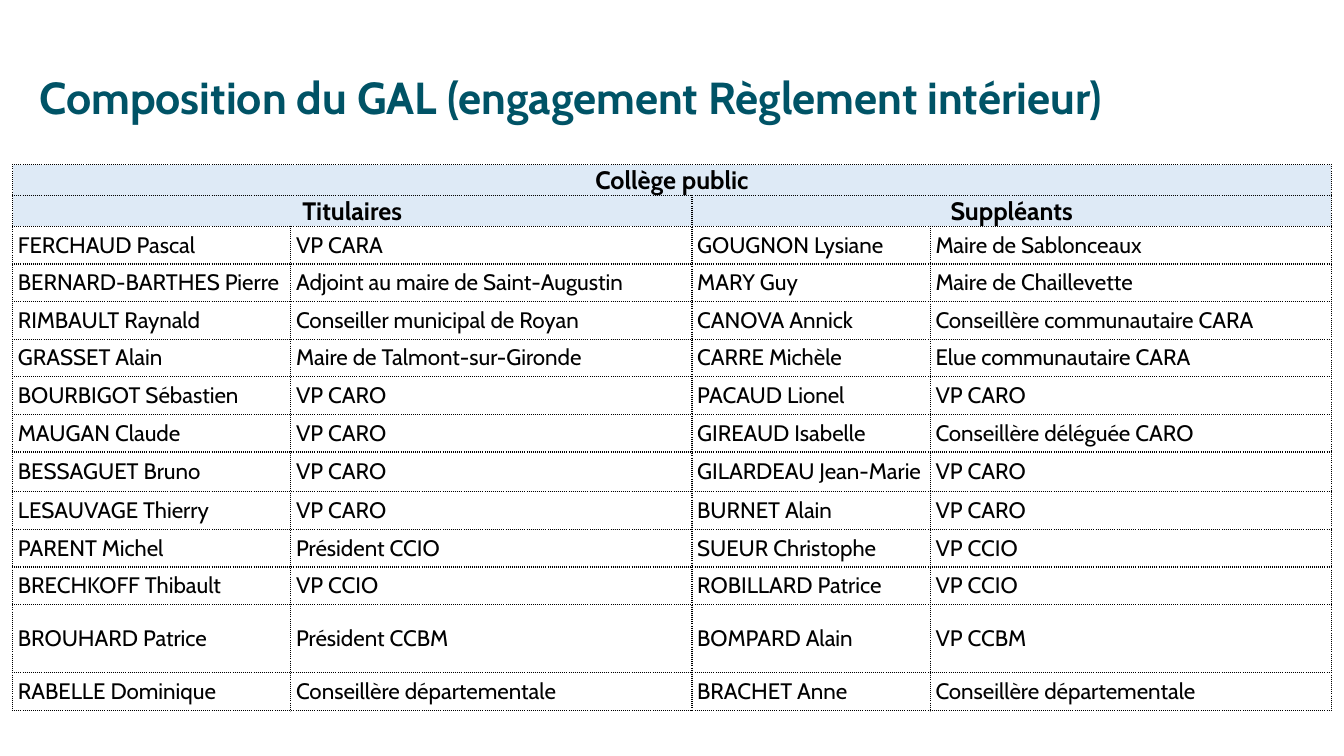
from lxml.etree import SubElement
from pptx import Presentation
from pptx.dml.color import RGBColor
from pptx.enum.text import MSO_ANCHOR as Anchor, PP_ALIGN as Align
from pptx.oxml.ns import qn
from pptx.util import Pt

PX = 9525
FONT = "Cabin"
BLACK, WHITE, TEAL, PALE = "000000", "FFFFFF", "005366", "DEEAF6"

COLS = [265, 382, 227, 382]
HEAD, BODY = 29, 35
TALL = {6: 38, 10: 65}

MEMBERS = [
    ("FERCHAUD Pascal", "VP CARA", "GOUGNON Lysiane", "Maire de Sablonceaux"),
    ("BERNARD-BARTHES Pierre", "Adjoint au maire de Saint-Augustin",
     "MARY Guy", "Maire de Chaillevette"),
    ("RIMBAULT Raynald", "Conseiller municipal de Royan",
     "CANOVA Annick", "Conseillère communautaire CARA"),
    ("GRASSET Alain", "Maire de Talmont-sur-Gironde",
     "CARRE Michèle", "Elue communautaire CARA"),
    ("BOURBIGOT Sébastien", "VP CARO", "PACAUD Lionel", "VP CARO"),
    ("MAUGAN Claude", "VP CARO",
     "GIREAUD Isabelle", "Conseillère déléguée CARO"),
    ("BESSAGUET Bruno", "VP CARO", "GILARDEAU Jean-Marie", "VP CARO"),
    ("LESAUVAGE Thierry", "VP CARO", "BURNET Alain", "VP CARO"),
    ("PARENT Michel", "Président CCIO", "SUEUR Christophe", "VP CCIO"),
    ("BRECHKOFF Thibault", "VP CCIO", "ROBILLARD Patrice", "VP CCIO"),
    ("BROUHARD Patrice", "Président CCBM", "BOMPARD Alain", "VP CCBM"),
    ("RABELLE Dominique", "Conseillère départementale",
     "BRACHET Anne", "Conseillère départementale"),
]


def px(n):
    return int(n * PX)


def color(code):
    return RGBColor.from_string(code)


def add_run(para, text, size, tint=BLACK, bold=False):
    run = para.add_run()
    run.text = text
    font = run.font
    font.name, font.size, font.bold = FONT, Pt(size), bold
    font.color.rgb = color(tint)


def add_title(slide, text):
    box = slide.shapes.add_textbox(px(28), px(26), px(1104), px(139))
    frame = box.text_frame
    frame.word_wrap = True
    frame.vertical_anchor = Anchor.MIDDLE
    para = frame.paragraphs[0]
    para.line_spacing = 0.9
    add_run(para, text, 32, TEAL, True)


def style(cell, fill, inset):
    """Give a cell dotted borders, a fill and equal margins."""
    props = cell._tc.get_or_add_tcPr()
    for side in "LRTB":
        line = SubElement(props, qn(f"a:ln{side}"), w=str(Pt(1)))
        paint = SubElement(line, qn("a:solidFill"))
        SubElement(paint, qn("a:srgbClr"), val=BLACK)
        SubElement(line, qn("a:prstDash"), val="sysDot")
    cell.fill.solid()
    cell.fill.fore_color.rgb = color(fill)
    cell.margin_left = cell.margin_right = px(inset)
    cell.margin_top = cell.margin_bottom = px(inset)


def add_head(table, row, first, last, text):
    cell = table.cell(row, first)
    cell.merge(table.cell(row, last))
    para = cell.text_frame.paragraphs[0]
    para.alignment = Align.CENTER
    add_run(para, text, 18, bold=True)


def add_grid(slide):
    rows = [HEAD] * 2 + [TALL.get(i, BODY) for i in range(len(MEMBERS))]
    table = slide.shapes.add_table(
        len(rows), len(COLS), px(12), px(157),
        px(sum(COLS)), px(sum(rows))).table
    table.first_row = table.horz_banding = False
    for col, width in zip(table.columns, COLS):
        col.width = px(width)
    for r, height in enumerate(rows):
        table.rows[r].height = px(height)
        for cell in table.rows[r].cells:
            style(cell, *((PALE, 0) if r < 2 else (WHITE, 5)))
    add_head(table, 0, 0, 3, "Collège public")
    add_head(table, 1, 0, 1, "Titulaires")
    add_head(table, 1, 2, 3, "Suppléants")
    for r, member in enumerate(MEMBERS, 2):
        for c, text in enumerate(member):
            cell = table.cell(r, c)
            cell.vertical_anchor = Anchor.MIDDLE
            add_run(cell.text_frame.paragraphs[0], text, 16)


def main():
    deck = Presentation()
    deck.slide_width, deck.slide_height = px(1280), px(720)
    slide = deck.slides.add_slide(deck.slide_layouts[6])
    add_grid(slide)
    add_title(slide, "Composition du GAL (engagement Règlement intérieur)")
    deck.save("out.pptx")


if __name__ == "__main__":
    main()
